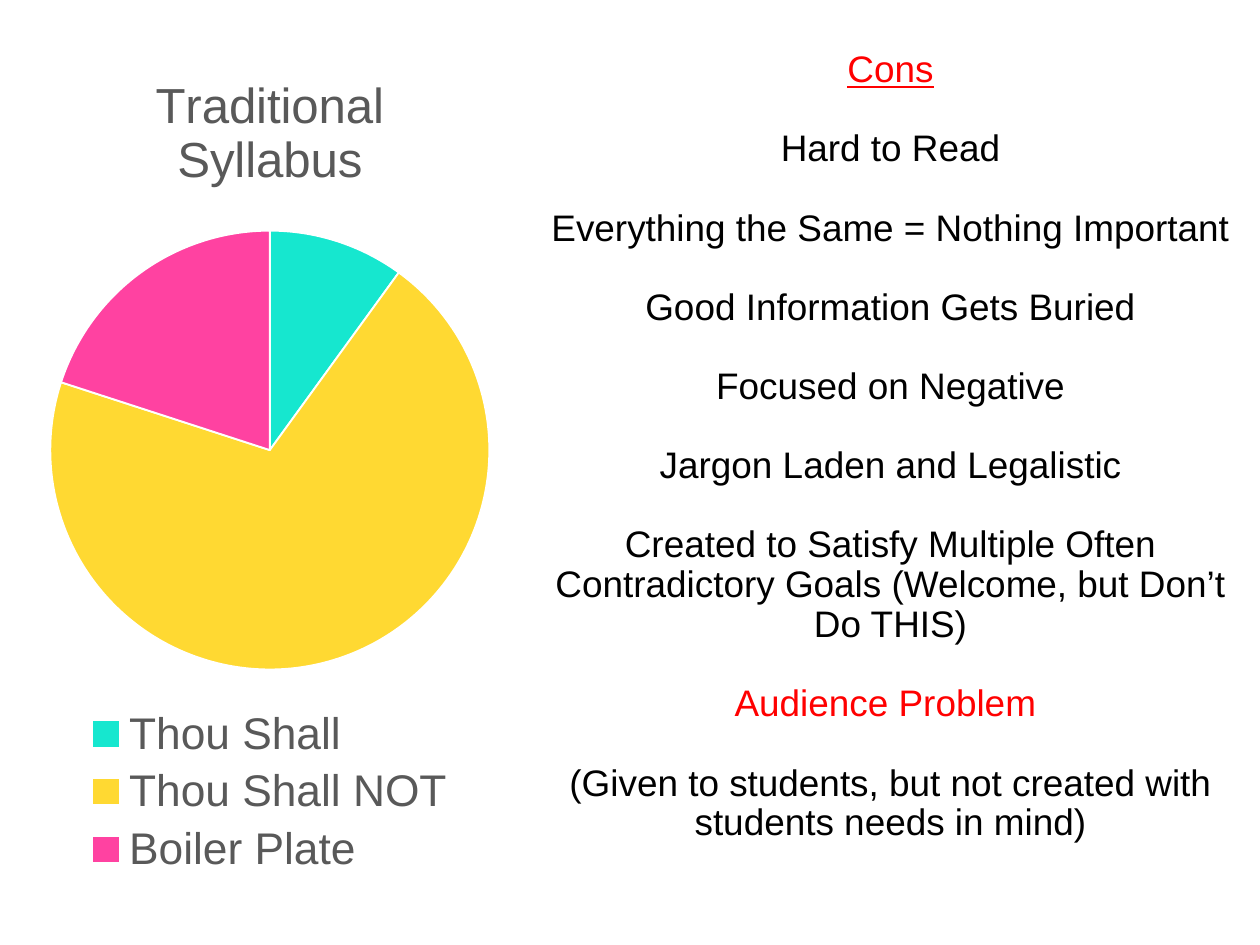
import dataclasses

import lxml.etree
import pptx
import pptx.chart.data
import pptx.dml.color
import pptx.enum.chart
import pptx.enum.text
import pptx.oxml
import pptx.oxml.ns
import pptx.util
from pptx.util import Cm, Pt


def rgb(code):
    """Return a colour from its hex code."""
    return pptx.dml.color.RGBColor.from_string(code)


@dataclasses.dataclass(frozen=True)
class Theme:
    """Hold the colours and type sizes of the slide."""
    font: str = "Arial"
    ink: str = "000000"
    accent: str = "FF0000"
    label: str = "595959"
    paper: str = "FFFFFF"
    slices: tuple = ("16E7CF", "FFD932", "FF42A1")
    title_size: int = 40
    legend_size: int = 36
    body_size: int = 30
    body_gap: int = 32


THEME = Theme()
SYLLABUS_TITLE = "Traditional Syllabus"
SYLLABUS_SHARES = {"Thou Shall": 10, "Thou Shall NOT": 70, "Boiler Plate": 20}
CONS = (
    ("Cons", THEME.accent, True),
    ("Hard to Read", THEME.ink, False),
    ("Everything the Same = Nothing Important", THEME.ink, False),
    ("Good Information Gets Buried", THEME.ink, False),
    ("Focused on Negative", THEME.ink, False),
    ("Jargon Laden and Legalistic", THEME.ink, False),
    ("Created to Satisfy Multiple Often Contradictory Goals "
     "(Welcome, but Don’t Do THIS)", THEME.ink, False),
    ("Audience Problem ", THEME.accent, False),
    ("(Given to students, but not created with students needs in mind)",
     THEME.ink, False),
)


def style_font(font, size, color):
    """Apply the slide typeface with a size and a colour."""
    font.name = THEME.font
    font.size = Pt(size)
    font.bold = False
    font.color.rgb = rgb(color)


def place_plot(chart, x, y, w, h):
    """Fix the inner plot area as fractions of the chart."""
    plot_area = chart.plots[0]._element.getparent()
    for layout in plot_area.findall(pptx.oxml.ns.qn("c:layout")):
        plot_area.remove(layout)
    layout = lxml.etree.Element(pptx.oxml.ns.qn("c:layout"))
    manual = lxml.etree.SubElement(layout, pptx.oxml.ns.qn("c:manualLayout"))
    settings = (("layoutTarget", "inner"), ("xMode", "edge"), ("yMode", "edge"),
                ("x", x), ("y", y), ("w", w), ("h", h))
    for tag, value in settings:
        entry = lxml.etree.SubElement(manual, pptx.oxml.ns.qn(f"c:{tag}"))
        entry.set("val", str(value))
    plot_area.insert(0, layout)


def add_syllabus_pie(slide, left, top, width, height):
    """Draw the pie of syllabus content with its title and legend."""
    shares = pptx.chart.data.CategoryChartData()
    shares.categories = list(SYLLABUS_SHARES)
    shares.add_series(SYLLABUS_TITLE, list(SYLLABUS_SHARES.values()))
    pie = slide.shapes.add_chart(pptx.enum.chart.XL_CHART_TYPE.PIE,
                                 left, top, width, height, shares).chart
    style_font(pie.font, 10, THEME.ink)

    pie.has_title = True
    heading = pie.chart_title.text_frame.paragraphs[0].add_run()
    heading.text = SYLLABUS_TITLE
    style_font(heading.font, THEME.title_size, THEME.label)
    pie.chart_title.include_in_layout = False

    pie.has_legend = True
    pie.legend.position = pptx.enum.chart.XL_LEGEND_POSITION.BOTTOM
    pie.legend.include_in_layout = False
    style_font(pie.legend.font, THEME.legend_size, THEME.label)

    pie.plots[0].vary_by_categories = True
    for index, color in enumerate(THEME.slices):
        wedge = pie.plots[0].series[0].points[index].format
        wedge.fill.solid()
        wedge.fill.fore_color.rgb = rgb(color)
        wedge.line.color.rgb = rgb(THEME.paper)
        wedge.line.width = Pt(1.5)
    place_plot(pie, 0.03, 0.22, 0.94, 0.53)


def add_cons(slide, left, top, width, height):
    """Write the centred list of drawbacks."""
    frame = slide.shapes.add_textbox(left, top, width, height).text_frame
    frame.word_wrap = True
    frame.vertical_anchor = pptx.enum.text.MSO_ANCHOR.MIDDLE
    frame.margin_left = frame.margin_right = Cm(0.15)
    frame.margin_top = frame.margin_bottom = Cm(0.15)
    for index, (wording, color, underlined) in enumerate(CONS):
        line = frame.add_paragraph() if index else frame.paragraphs[0]
        line.alignment = pptx.enum.text.PP_ALIGN.CENTER
        line.line_spacing = 0.9
        line.space_before = Pt(THEME.body_gap)
        run = line.add_run()
        run.text = wording
        style_font(run.font, THEME.body_size, color)
        run.font.underline = underlined


def main():
    """Build the slide and save it."""
    deck = pptx.Presentation()
    deck.slide_width, deck.slide_height = Cm(36.12), Cm(27.1)
    slide = deck.slides.add_slide(deck.slide_layouts[6])
    add_syllabus_pie(slide, Cm(1.04), Cm(1.22), Cm(13.39), Cm(24.1))
    add_cons(slide, Cm(15.6), Cm(0.64), Cm(19.86), Cm(24.38))
    deck.save("out.pptx")


if __name__ == "__main__":
    main()
